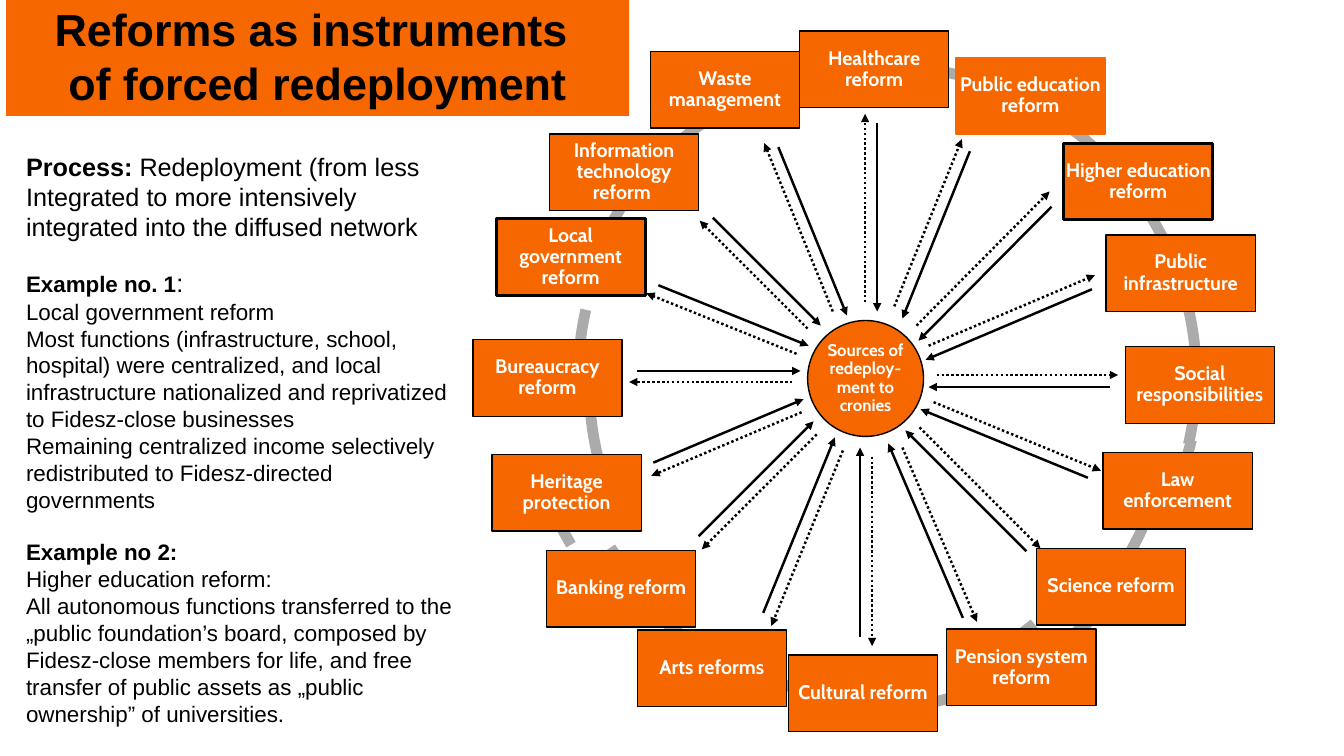
from lxml.etree import SubElement
from pptx import Presentation
from pptx.dml.color import RGBColor
from pptx.enum.dml import MSO_LINE
from pptx.enum.shapes import MSO_CONNECTOR, MSO_SHAPE
from pptx.enum.text import MSO_ANCHOR, MSO_AUTO_SIZE, PP_ALIGN
from pptx.oxml.ns import qn
from pptx.util import Pt

PX = 9144  # 100 px to the inch
ORANGE, BLACK, WHITE, GREY = "F76700", "000000", "FFFFFF", "ABABAB"
hue = RGBColor.from_string


def write(para, text, tint, **look):
    """Add a run and set its font from the look values."""
    font = para.add_run().font
    para.runs[-1].text = text
    font.color.rgb = hue(tint)
    for key, val in look.items():
        setattr(font, key, val)


def draw(kind, at, fill, edge=None, width=1):
    """Add a flat shape; without an edge colour it has no line."""
    shape = slide.shapes.add_shape(kind, *[v * PX for v in at])
    shape.shadow.inherit = False
    shape.fill.solid()
    shape.fill.fore_color.rgb = hue(fill)
    if edge:
        shape.line.color.rgb = hue(edge)
        shape.line.width = Pt(width)
    else:
        shape.line.fill.background()
    return shape


deck = Presentation()
deck.slide_width, deck.slide_height = 1333 * PX, 750 * PX
slide = deck.slides.add_slide(deck.slide_layouts[5])

# Title band
title = slide.shapes.title
place = {"left": 6, "top": -3, "width": 618, "height": 118}
for key, val in place.items():
    setattr(title, key, val * PX)
title.fill.solid()
title.fill.fore_color.rgb = hue(ORANGE)
frame = title.text_frame
frame.auto_size = MSO_AUTO_SIZE.NONE
frame.vertical_anchor = MSO_ANCHOR.TOP
for i, text in enumerate(["Reforms as instruments ", "of forced redeployment"]):
    para = frame.add_paragraph() if i else frame.paragraphs[0]
    para.alignment = PP_ALIGN.CENTER
    write(para, text, BLACK, name="Arial", size=Pt(32), bold=True)

# Ring: left, top, start and end angle of each arc
arcs = [
    (517, 65, 149.14, 165.71), (546, 52, 131.39, 145.67),
    (539, 60, 121.6, 132.5), (540, 59, 108, 121.5),
    (540, 63, 95.67, 108.47), (541, 67, 84.19, 96.18),
    (548, 76, 72.21, 85.38), (516, 60, 51.41, 68.27),
    (568, 60, 39.5, 57.15), (535, 78, 22.23, 35.36),
    (565, 43, 14.46, 27.24), (560, 55, 1.18, 13),
    (560, 60, 204.2, 0.64), (553, 41, 195.41, 206.48),
    (568, 60, 177.71, 192.78), (579, 65, 158.86, 176.3),
]
for left, top, start, end in arcs:
    arc = draw(MSO_SHAPE.BLOCK_ARC, (left, top, 632, 632), GREY)
    # angles are stored in 60000ths of a degree, adjustments in 100000ths
    for i, val in enumerate([start * 0.6, end * 0.6, 0.017]):
        arc.adjustments[i] = val

# Hub and reform boxes, clockwise from the top
labels = [
    (793, 31, "Healthcare reform"), (948, 57, "Public education reform"),
    (1055, 142, "Higher education reform"), (1097, 233, "Public infrastructure"),
    (1116, 344, "Social responsibilities"), (1094, 449, "Law enforcement"),
    (1028, 544, "Science reform"), (939, 624, "Pension system reform"),
    (782, 650, "Cultural reform"), (632, 625, "Arts reforms"),
    (542, 546, "Banking reform"), (488, 451, "Heritage protection"),
    (469, 337, "Bureaucracy reform"), (492, 217, "Local government reform"),
    (545, 133, "Information technology reform "), (645, 51, "Waste management"),
]
edges = {"Public education reform": (ORANGE, 1),
         "Higher education reform": (BLACK, 2.25),
         "Local government reform": (BLACK, 2.25)}
hub = draw(MSO_SHAPE.OVAL, (801, 318, 115, 115), ORANGE, BLACK)
nodes = [(hub, "Sources of redeploy-ment to cronies", 12)]
for left, top, text in labels:
    edge = edges.get(text, (BLACK, 1))
    box = draw(MSO_SHAPE.RECTANGLE, (left, top, 148, 76), ORANGE, *edge)
    nodes.append((box, text, 14))
for node, text, size in nodes:
    frame = node.text_frame
    frame.word_wrap = True
    frame.vertical_anchor = MSO_ANCHOR.MIDDLE
    for side in ("left", "top", "right", "bottom"):
        setattr(frame, "margin_" + side, 2 * PX)
    para = frame.paragraphs[0]
    para.alignment = PP_ALIGN.CENTER
    para.line_spacing = 0.9
    write(para, text, WHITE, name="Cabin", size=Pt(size), bold=True)

# Arrow pairs: dotted one from hub to box, then the shift to the solid one
pairs = [
    (858, 300, 858, 113, 12, 9), (887, 304, 954, 138, 8, 12),
    (909, 323, 1041, 190, 2, 15), (921, 343, 1086, 273, -3, 14),
    (929, 372, 1109, 372, -8, 12), (926, 399, 1092, 467, -13, 7),
    (912, 424, 1032, 544, -14, 3), (895, 444, 969, 617, -14, -4),
    (865, 453, 865, 641, -12, -9), (836, 447, 765, 621, -8, -13),
    (810, 431, 696, 545, -3, -13), (795, 409, 646, 472, 2, -13),
    (786, 379, 624, 379, 8, -11), (790, 351, 641, 291, 12, -8),
    (801, 326, 694, 219, 13, -3), (826, 309, 758, 142, 14, 4),
]
for x1, y1, x2, y2, dx, dy in pairs:
    out = (x1, y1, x2, y2)
    back = (x2 + dx, y2 + dy, x1 + dx, y1 + dy)
    for ends, dash in ((out, MSO_LINE.ROUND_DOT), (back, MSO_LINE.SOLID)):
        arrow = slide.shapes.add_connector(
            MSO_CONNECTOR.STRAIGHT, *[v * PX for v in ends])
        arrow.line.color.rgb = hue(BLACK)
        arrow.line.width = Pt(1.75)
        arrow.line.dash_style = dash
        props = arrow._element.spPr
        SubElement(props.find(qn("a:ln")), qn("a:tailEnd"), type="triangle")
        SubElement(props, qn("a:effectLst"))

# Body text: space before, then runs of text, size and weight
body = [
    (0, [("Process: ", 18, True), ("Redeployment (from less", 18, False)]),
    (0, [("Integrated to more intensively integrated into the diffused network",
          18, False)]),
    (18.4, [("Example no. 1", 16, True), (":", 18, False)]),
    (0, [("Local government reform", 16, False)]),
    (0, [("Most functions (infrastructure, school, hospital) were centralized, "
          "and local infrastructure nationalized and reprivatized to "
          "Fidesz-close businesses", 16, False)]),
    (0, [("Remaining centralized income selectively redistributed to "
          "Fidesz-directed governments", 16, False)]),
    (18.4, [("Example no 2:", 16, True)]),
    (0, [("Higher education reform:", 16, False)]),
    (0, [("All autonomous functions transferred to the „public foundation’s "
          "board, composed by Fidesz-close members for life, and free transfer "
          "of public assets as „public ownership” of universities.", 16, False)]),
]
note = slide.shapes.add_textbox(*[v * PX for v in (16, 145, 458, 589)])
frame = note.text_frame
frame.word_wrap = True
for i, (gap, runs) in enumerate(body):
    para = frame.add_paragraph() if i else frame.paragraphs[0]
    para.space_before = Pt(gap)
    for text, size, bold in runs:
        write(para, text, BLACK, name="Arial", size=Pt(size), bold=bold)

deck.save("out.pptx")
